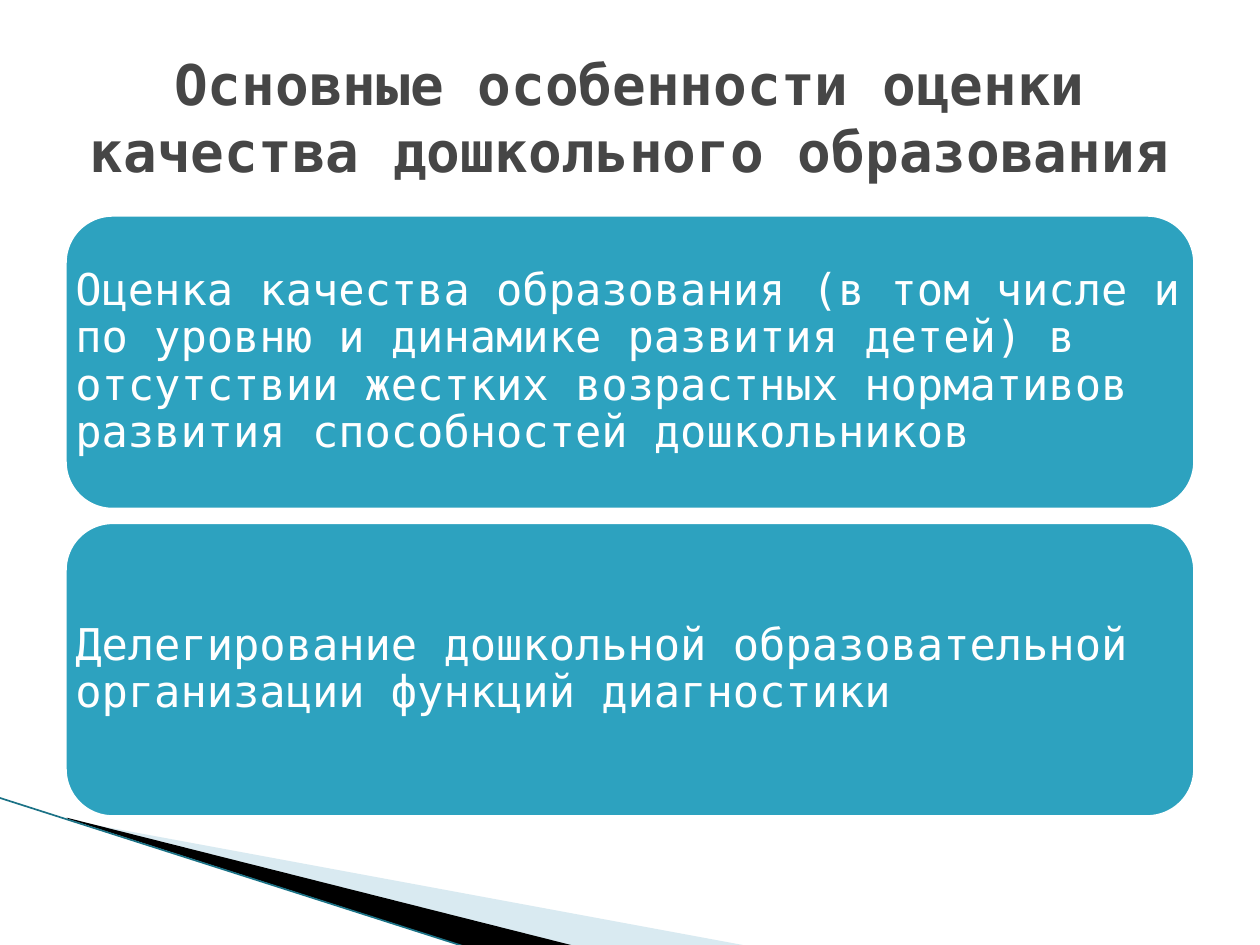
from lxml.etree import SubElement
from pptx import Presentation
from pptx.dml.color import RGBColor
from pptx.enum.shapes import MSO_CONNECTOR, MSO_SHAPE
from pptx.enum.text import MSO_ANCHOR, PP_ALIGN
from pptx.oxml.ns import qn
from pptx.util import Inches, Pt

COLORS = {
    "card": "2DA2BF",
    "white": "FFFFFF",
    "title": "464646",
    "pale": "A0CBDC",
    "black": "000000",
    "edge": "1B7286",
}
FONT = "DejaVu Sans Mono"

TITLE = "Основные особенности оценки качества дошкольного образования"
CARDS = [
    "Оценка качества образования (в том числе и по уровню и динамике развития "
    "детей) в отсутствии жестких возрастных нормативов развития способностей "
    "дошкольников",
    "Делегирование дошкольной образовательной организации функций диагностики",
]


def color(name):
    return RGBColor.from_string(COLORS[name])


def write(box, text, *, size, ink, bold=False, align=PP_ALIGN.LEFT, spacing=1.0):
    para = box.text_frame.paragraphs[0]
    para.alignment = align
    para.line_spacing = spacing
    span = para.add_run()
    span.text = text
    span.font.name = FONT
    span.font.size = Pt(size)
    span.font.bold = bold
    span.font.color.rgb = color(ink)


class SlideBuilder:
    def __init__(self, deck):
        self.page = deck.slides.add_slide(deck.slide_layouts[6])
        self.shapes = self.page.shapes

    def polygon(self, points, fill, opacity=100):
        start, *rest = [(Inches(x), Inches(y)) for x, y in points]
        builder = self.shapes.build_freeform(*start)
        builder.add_line_segments(rest, close=True)
        shape = builder.convert_to_shape()
        shape.shadow.inherit = False
        shape.fill.solid()
        shape.fill.fore_color.rgb = color(fill)
        shape.line.fill.background()
        if opacity < 100:
            tint = shape._element.spPr.find(qn("a:solidFill"))[0]
            SubElement(tint, qn("a:alpha"), val=str(opacity * 1000))

    def line(self, start, end, ink, width):
        ends = [Inches(value) for value in (*start, *end)]
        connector = self.shapes.add_connector(MSO_CONNECTOR.STRAIGHT, *ends)
        connector.line.color.rgb = color(ink)
        connector.line.width = Pt(width)
        SubElement(connector._element.spPr, qn("a:effectLst"))

    def text(self, frame, text, **style):
        box = self.shapes.add_textbox(*map(Inches, frame))
        box.text_frame.word_wrap = True
        box.text_frame.vertical_anchor = MSO_ANCHOR.MIDDLE
        write(box, text, **style)

    def card(self, frame, text):
        shape = self.shapes.add_shape(MSO_SHAPE.ROUNDED_RECTANGLE, *map(Inches, frame))
        shape.shadow.inherit = False
        shape.fill.solid()
        shape.fill.fore_color.rgb = color("card")
        shape.line.color.rgb = color("white")
        shape.line.width = Pt(4.33)
        # The text spans the full card width, past the rounded corners
        self.text(frame, text, size=25, ink="white", spacing=0.9)


def main():
    deck = Presentation()
    deck.slide_width, deck.slide_height = Inches(10), Inches(7.5)
    slide = SlideBuilder(deck)

    # Corner decoration
    slide.polygon([(0.55, 6.51), (5.95, 7.51), (4.56, 7.51), (0.55, 6.5)], "pale", 40)
    slide.polygon([(0.53, 6.49), (4.57, 7.51), (3.72, 7.52), (0.54, 6.5)], "black")
    slide.line((-0.01, 6.33), (3.71, 7.52), "edge", 0.95)

    # Stacked cards
    left, top, width, height, gap = 0.5, 1.69, 9, 2.37, 0.07
    for index, text in enumerate(CARDS):
        slide.card((left, top + index * (height + gap), width, height), text)

    # Title
    slide.text((left, 0.3, width, 1.25), TITLE, size=32, ink="title", bold=True,
               align=PP_ALIGN.CENTER)

    deck.save("out.pptx")


if __name__ == "__main__":
    main()
